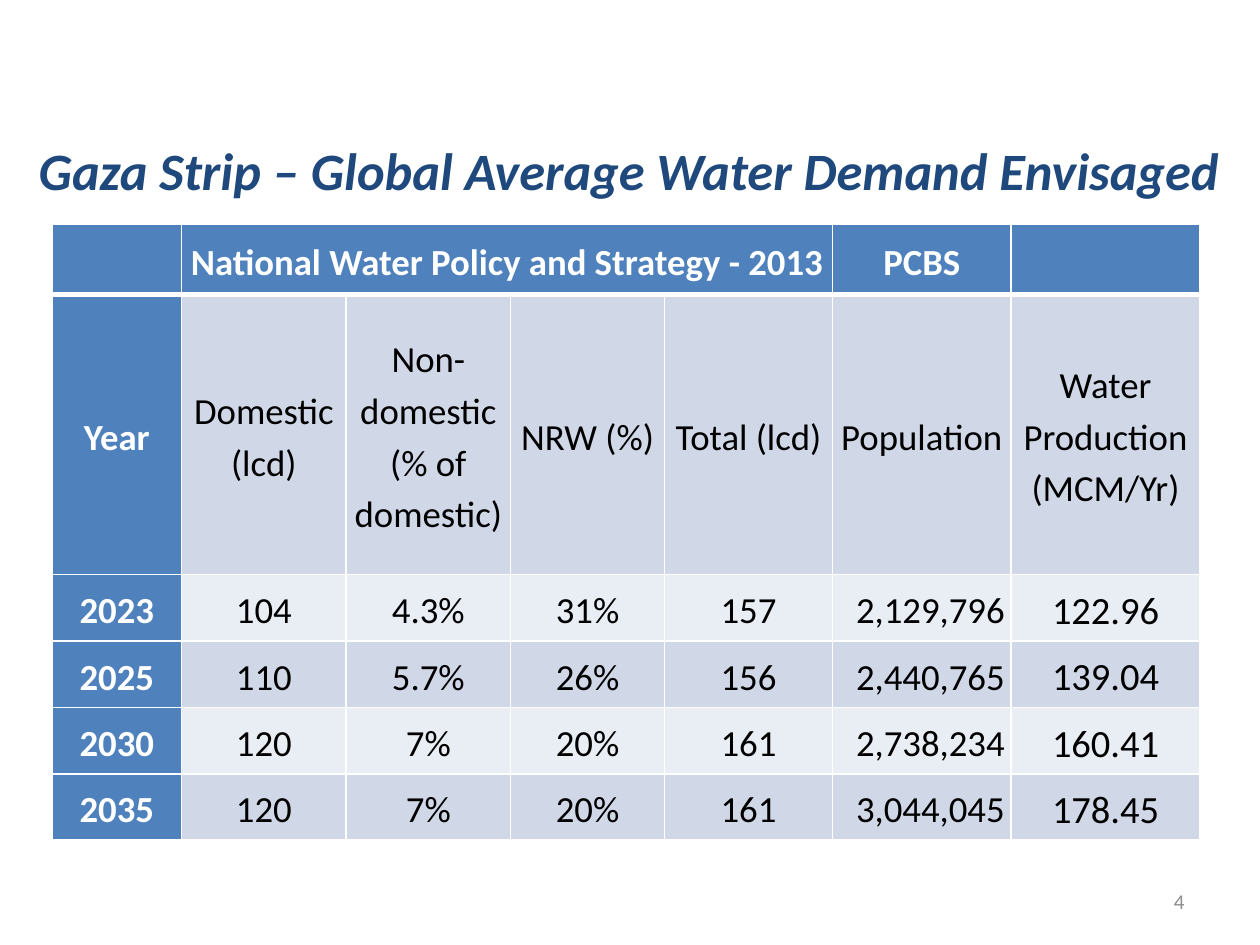
from lxml import etree
from pptx import Presentation
from pptx import util as u
from pptx.dml.color import RGBColor
from pptx.enum import text as t
from pptx.oxml import parse_xml
from pptx.oxml.ns import nsdecls, qn

COLORS = {"navy": "1F497D", "blue": "4F81BD", "pale": "D0D8E8", "paler": "E9EDF4",
          "white": "FFFFFF", "black": "000000", "gray": "8C8C8C"}
COLUMNS = [74, 94, 94, 88, 96, 102, 108]
ROWS = [40, 160, 38, 38, 38, 38]
DEMAND = [
    ["", "National Water Policy and Strategy - 2013", "", "", "", "PCBS", ""],
    ["Year", "Domestic (lcd)", "Non-domestic (% of domestic)", "NRW (%)", "Total (lcd)",
     "Population", "Water Production (MCM/Yr)"],
    ["2023", "104", "4.3%", "31%", "157", "2,129,796", "122.96"],
    ["2025", "110", "5.7%", "26%", "156", "2,440,765", "139.04"],
    ["2030", "120", "7%", "20%", "161", "2,738,234", "160.41"],
    ["2035", "120", "7%", "20%", "161", "3,044,045", "178.45"],
]


def write(frame, words, size, color, bold=False, italic=False, align="CENTER",
          spacing=None, before=0):
    """Write one formatted paragraph and return its run."""
    para = frame.paragraphs[0]
    para.alignment = t.PP_ALIGN[align]
    para.space_before = u.Pt(before)
    if spacing:
        para.line_spacing = spacing
    span = para.add_run()
    span.text = words
    span.font.name = "Calibri"
    span.font.size = u.Pt(size)
    span.font.bold = bold
    span.font.italic = italic
    span.font.color.rgb = RGBColor.from_string(COLORS[color])
    return span


def place(shape, box):
    """Move a shape to a box of left, top, width and height in points."""
    shape.left, shape.top, shape.width, shape.height = [u.Pt(value) for value in box]


def add_title(page, box):
    """Fill the title placeholder with shadowed text."""
    title = page.shapes.title
    place(title, box)
    frame = title.text_frame
    frame.word_wrap = True
    frame.auto_size = t.MSO_AUTO_SIZE.NONE
    frame.vertical_anchor = t.MSO_ANCHOR.TOP
    frame.margin_left = frame.margin_right = u.Pt(6)
    frame.margin_top = frame.margin_bottom = u.Pt(3)
    span = write(frame, "Gaza Strip – Global Average Water Demand Envisaged ", 30, "navy",
                 bold=True, italic=True)
    shadow = parse_xml(
        f'<a:effectLst {nsdecls("a")}><a:outerShdw blurRad="38100" dist="38100" dir="2700000" '
        f'algn="tl"><a:srgbClr val="{COLORS["black"]}"><a:alpha val="43000"/></a:srgbClr>'
        '</a:outerShdw></a:effectLst>')
    span.font._element.find(qn("a:solidFill")).addnext(shadow)


def add_borders(cell, top, bottom):
    """Draw white cell borders, with top and bottom widths in points."""
    properties = cell._tc.get_or_add_tcPr()
    widths = {"lnL": 1, "lnR": 1, "lnT": top, "lnB": bottom}
    for index, (side, width) in enumerate(widths.items()):
        line = etree.Element(qn(f"a:{side}"), w=str(u.Pt(width)))
        fill = etree.SubElement(line, qn("a:solidFill"))
        etree.SubElement(fill, qn("a:srgbClr"), val=COLORS["white"])
        properties.insert(index, line)


def add_demand_table(page, box):
    """Build the water demand table."""
    left, top, width, height = [u.Pt(value) for value in box]
    table = page.shapes.add_table(len(ROWS), len(COLUMNS), left, top, width, height).table
    for column, points in zip(table.columns, COLUMNS):
        column.width = u.Pt(points)
    for row, points in zip(table.rows, ROWS):
        row.height = u.Pt(points)
    table.cell(0, 1).merge(table.cell(0, 4))
    for i, values in enumerate(DEMAND):
        for j, words in enumerate(values):
            cell = table.cell(i, j)
            heading = i == 0 or j == 0
            fill = "blue" if heading else "pale" if i % 2 else "paler"
            cell.fill.solid()
            cell.fill.fore_color.rgb = RGBColor.from_string(COLORS[fill])
            add_borders(cell, 3 if i == 1 else 1, 3 if i == 0 else 1)
            cell.vertical_anchor = t.MSO_ANCHOR.MIDDLE
            cell.margin_left = cell.margin_right = u.Pt(3.6)
            cell.margin_top = cell.margin_bottom = 0
            if words:
                write(cell.text_frame, words, 22 if i > 1 and j == 6 else 21,
                      "white" if heading else "black", bold=heading,
                      align="RIGHT" if i > 1 and j == 5 else "CENTER",
                      spacing=1.15, before=6)


def add_page_number(page, box):
    """Add the page number at the lower right."""
    number = page.shapes.add_textbox(*[u.Pt(value) for value in box])
    number.text_frame.word_wrap = True
    number.text_frame.vertical_anchor = t.MSO_ANCHOR.MIDDLE
    write(number.text_frame, "4", 12, "gray", align="RIGHT")


def main():
    """Build and save the deck."""
    deck = Presentation()
    deck.slide_width, deck.slide_height = u.Pt(720), u.Pt(540)
    page = deck.slides.add_slide(deck.slide_layouts[5])
    add_page_number(page, (516, 500.5, 168, 28.75))
    add_title(page, (4.5, 75.6, 717, 42.5))
    add_demand_table(page, (29.8, 128.2, sum(COLUMNS), sum(ROWS)))
    deck.save("out.pptx")


if __name__ == "__main__":
    main()
